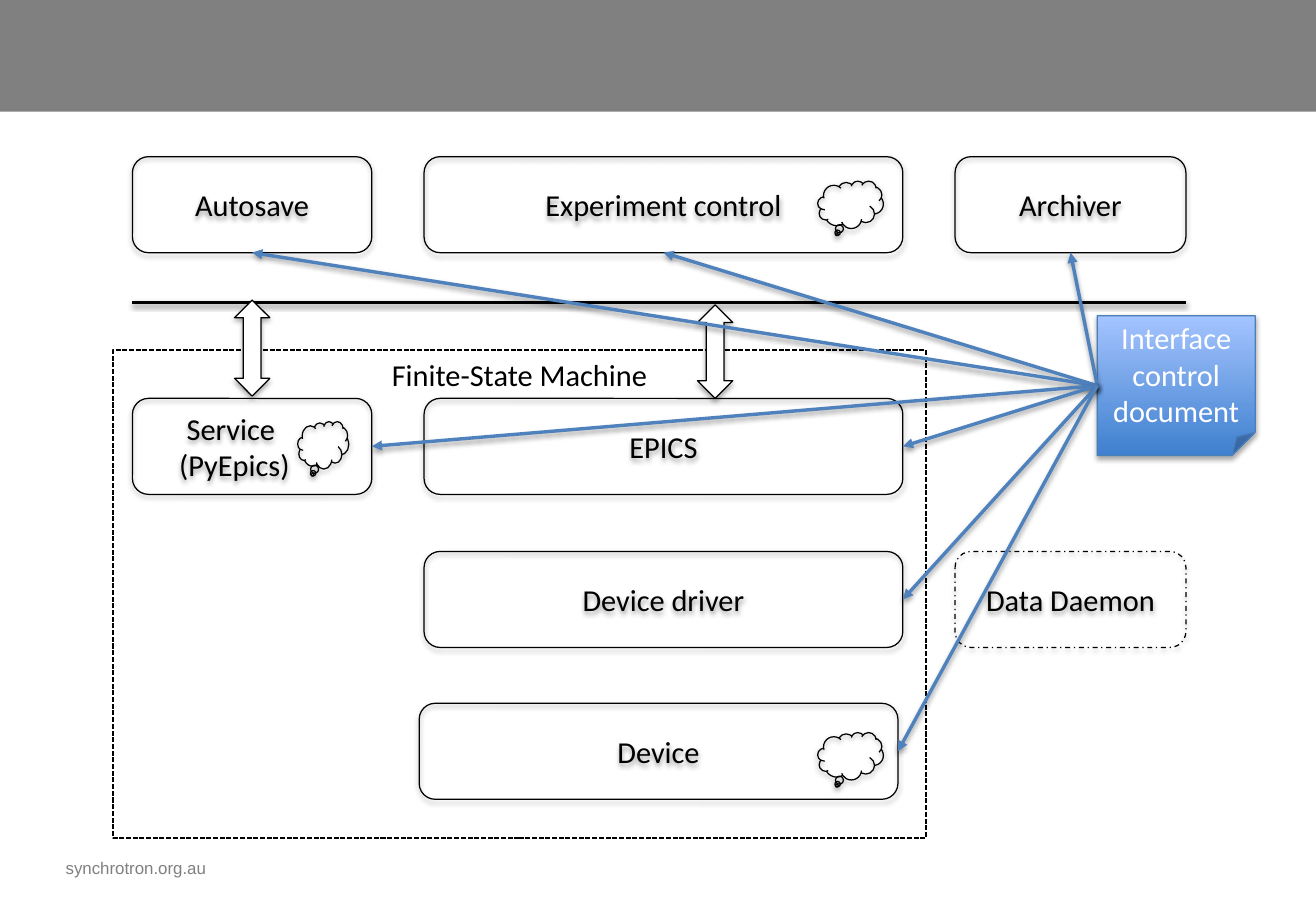
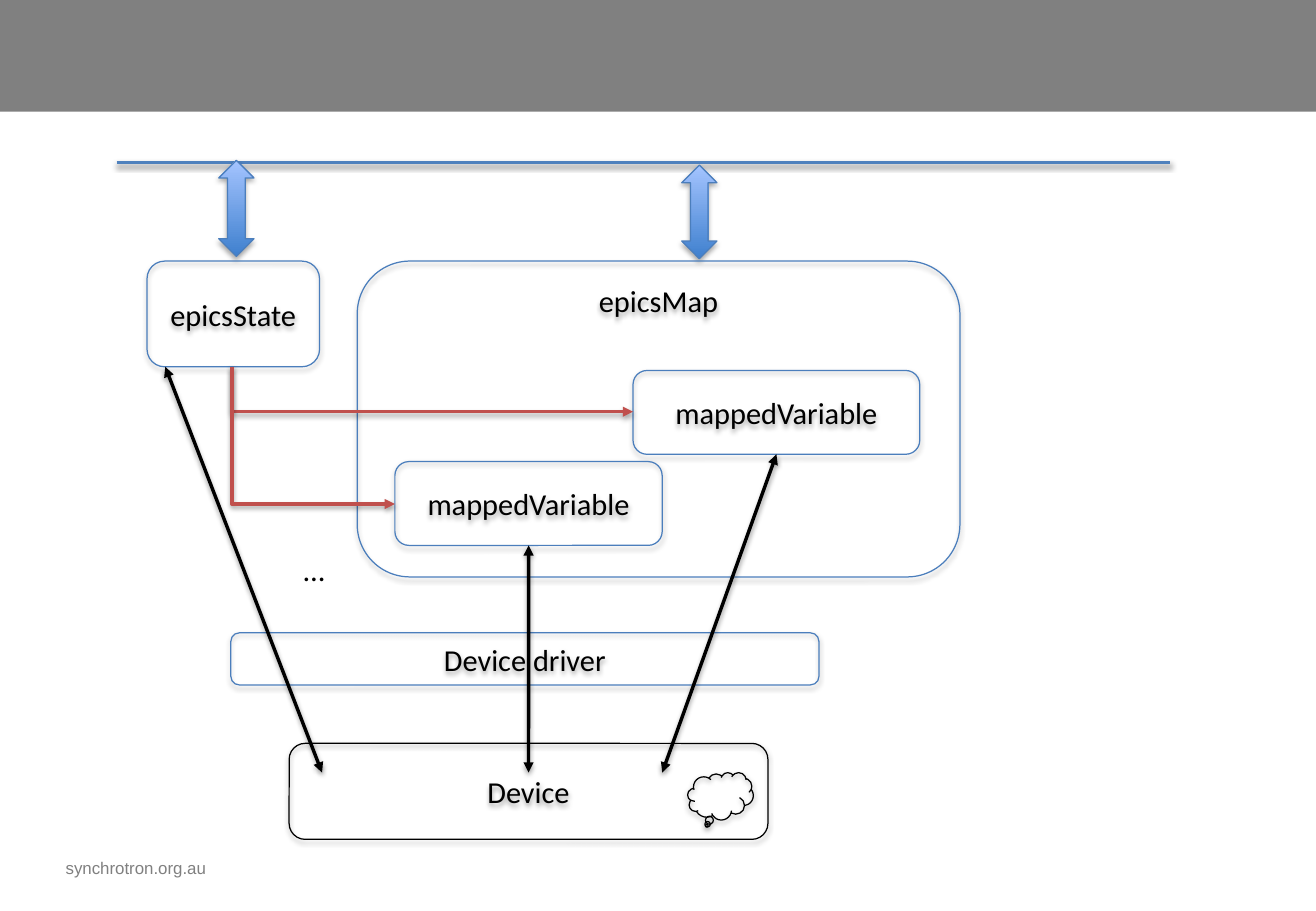
from dataclasses import dataclass

from lxml.etree import SubElement
from pptx import Presentation
from pptx.dml.color import RGBColor
from pptx.enum.dml import MSO_LINE as DASH
from pptx.enum.shapes import MSO_CONNECTOR as LINK, MSO_SHAPE as SHAPE
from pptx.enum.text import MSO_ANCHOR as ANCHOR, MSO_AUTO_SIZE as AUTO, PP_ALIGN as ALIGN
from pptx.oxml.ns import qn
from pptx.util import Inches, Pt


@dataclass(frozen=True)
class Theme:
    black: RGBColor = RGBColor.from_string("000000")
    white: RGBColor = RGBColor.from_string("FFFFFF")
    grey: RGBColor = RGBColor.from_string("808080")
    blue: RGBColor = RGBColor.from_string("4F81BD")
    outline: RGBColor = RGBColor.from_string("4B7EBC")
    red: RGBColor = RGBColor.from_string("C0504D")
    gradient: tuple = (RGBColor.from_string("3F80CE"), RGBColor.from_string("A4C4FF"))
    font: str = "Calibri"
    footer_font: str = "Arial"
    body: Pt = Pt(18)
    small: Pt = Pt(10)
    thin: Pt = Pt(0.75)
    frame: Pt = Pt(1)
    thick: Pt = Pt(2)
    # Shadows: opacity in percent, distance in points
    firm: tuple = (38, 1.6)
    soft: tuple = (35, 1.8)


T = Theme()
raised = []  # (shape, shadow) pairs


def box(s, kind, at, text="", line=T.black, fill=None, color=T.black, width=T.thin,
        dash=None, anchor=ANCHOR.MIDDLE, shadow=T.firm):
    """Add an outlined shape; fill is None, a colour or a pair of gradient colours."""
    sp = s.shapes.add_shape(kind, *map(Inches, at))
    sp.shadow.inherit = False
    if fill is None:
        sp.fill.background()
    elif fill == T.gradient:
        sp.fill.gradient()
        sp.fill.gradient_angle = 90
        for stop, stop_color in zip(sp.fill.gradient_stops, fill):
            stop.color.rgb = stop_color
    else:
        sp.fill.solid()
        sp.fill.fore_color.rgb = fill
    sp.line.color.rgb = line
    sp.line.width = width
    if dash:
        sp.line.dash_style = dash
    if text:
        tf = sp.text_frame
        tf.word_wrap = True
        tf.vertical_anchor = anchor
        p = tf.paragraphs[0]
        p.alignment = ALIGN.CENTER
        for i, part in enumerate(text.split("\n")):
            if i:
                p.add_line_break()
            r = p.add_run()
            r.text = part
            r.font.name, r.font.size, r.font.color.rgb = T.font, T.body, color
    if shadow:
        raised.append((sp, shadow))
    return sp


def link(s, start, end, color, arrows=()):
    """Draw a line; each end is a point in inches or a (shape, side) pair."""
    c = s.shapes.add_connector(LINK.STRAIGHT, 0, 0, 0, 0)
    if isinstance(start[0], float):
        c.begin_x, c.begin_y = map(Inches, start)
    else:
        c.begin_connect(*start)
    if isinstance(end[0], float):
        c.end_x, c.end_y = map(Inches, end)
    else:
        c.end_connect(*end)
    c.line.color.rgb = color
    c.line.width = T.thick
    ln = c.element.spPr.find(qn("a:ln"))
    for arrow in arrows:
        SubElement(ln, qn(f"a:{arrow}"), type="triangle")
    raised.append((c, T.firm))
    return c


prs = Presentation()
prs.slide_width, prs.slide_height = Inches(10.83), Inches(7.5)
layout = prs.slide_layouts[6]
overview, mapping = [prs.slides.add_slide(layout) for _ in range(2)]

# Band and footer, moved to the layout so that both slides share them
for ph in list(layout.placeholders):
    ph.element.getparent().remove(ph.element)
band = overview.shapes.add_shape(SHAPE.RECTANGLE, 0, 0, prs.slide_width, Inches(0.92))
band.shadow.inherit = False
band.fill.solid()
band.fill.fore_color.rgb = T.grey
band.line.fill.background()
footer = overview.shapes.add_textbox(Inches(0.54), Inches(7.01), Inches(2.05), Inches(0.27))
tf = footer.text_frame
tf.word_wrap = True
tf.margin_left = 0
r = tf.paragraphs[0].add_run()
r.text = "synchrotron.org.au"
r.font.name, r.font.size, r.font.color.rgb = T.footer_font, T.small, T.grey
for sp in (band, footer):
    layout.shapes.element.append(sp.element)

# Frame of the state machine, behind everything else
box(overview, SHAPE.RECTANGLE, (0.93, 2.88, 6.69, 4.02), "Finite-State Machine",
    fill=T.white, width=T.frame, dash=DASH.SQUARE_DOT, anchor=ANCHOR.TOP, shadow=None)

# Bus with its two double arrows
for s, x, y, bus_color, line, fill in (
        (overview, 1.09, 2.49, T.black, T.black, T.white),
        (mapping, 0.96, 1.34, T.blue, T.outline, T.gradient)):
    link(s, (x, y), (x + 8.67, y), bus_color)
    for dx, dy, h in ((4.65, 0.02, 0.77), (0.84, -0.02, 0.79)):
        box(s, SHAPE.UP_DOWN_ARROW, (x + dx, y + dy, 0.29, h),
            line=line, fill=fill, shadow=T.soft)

# Slide 1: components and the interface document
BOX_H = 0.79
components = {}
for text, x, y, w in (
        ("Experiment control", 3.49, 1.29, 3.94),
        ("EPICS", 3.49, 3.28, 3.94),
        ("Device driver", 3.49, 4.54, 3.94),
        ("Autosave", 1.09, 1.29, 1.97),
        ("Archiver", 7.86, 1.29, 1.9),
        ("Device", 3.45, 5.79, 3.94),
        ("Service \n(PyEpics)", 1.09, 3.28, 1.97)):
    components[text] = box(overview, SHAPE.ROUNDED_RECTANGLE, (x, y, w, BOX_H), text)
components["Service \n(PyEpics)"].text_frame.margin_right = Inches(0.39)
box(overview, SHAPE.ROUNDED_RECTANGLE, (7.86, 4.54, 1.9, BOX_H), "Data Daemon",
    dash=DASH.DASH_DOT)

document = box(overview, SHAPE.FOLDED_CORNER, (9.03, 2.6, 1.3, 1.15),
               "Interface control document", line=T.outline, fill=T.gradient,
               color=T.white, shadow=T.soft)
for text, side in (("Archiver", 2), ("Experiment control", 2), ("Autosave", 2),
                   ("Service \n(PyEpics)", 3), ("EPICS", 3), ("Device driver", 3),
                   ("Device", 3)):
    link(overview, (document, 1), (components[text], side), T.blue, ["tailEnd"])

# Slide 2: state and mapped variables
epics_map, epics_state, upper_var, lower_var, driver = [
    box(mapping, SHAPE.ROUNDED_RECTANGLE, at, text, line=T.outline, shadow=T.soft)
    for text, at in (
        ("epicsMap", (2.94, 2.15, 4.96, 2.6)),
        ("epicsState", (1.21, 2.15, 1.42, 0.87)),
        ("mappedVariable", (5.21, 3.05, 2.36, 0.69)),
        ("mappedVariable", (3.25, 3.8, 2.2, 0.69)),
        ("Device driver", (1.9, 5.21, 4.84, 0.43)))]
epics_map.text_frame.vertical_anchor = ANCHOR.TOP

# Elbows that go down from the state, then right to a variable
x, y = 1.91, 3.02
for end_x, end_y in ((5.21, 3.39), (3.25, 4.15)):
    dx, dy = end_x - x, end_y - y
    c = link(mapping, (x, y), (end_x, end_y), T.red, ["tailEnd"])
    c.left, c.top = Inches(x + (dx - dy) / 2), Inches(y + (dy - dx) / 2)
    c.width, c.height = Inches(dy), Inches(dx)
    spPr = c.element.spPr
    spPr.find(qn("a:prstGeom")).set("prst", "bentConnector2")
    xfrm = spPr.find(qn("a:xfrm"))
    xfrm.set("rot", str(270 * 60000))
    xfrm.set("flipH", "1")

for start, end in (((1.36, 3.02), (2.65, 6.36)),
                   ((lower_var, 2), (4.35, 6.36)),
                   ((upper_var, 2), (5.45, 6.36))):
    link(mapping, start, end, T.black, ["headEnd", "tailEnd"])

dots = mapping.shapes.add_textbox(Inches(2.4), Inches(4.49), Inches(0.5), Inches(0.4))
tf = dots.text_frame
tf.word_wrap = True
tf.auto_size = AUTO.SHAPE_TO_FIT_TEXT
dots.element.txBody.find(qn("a:bodyPr")).set("vert", "wordArtVert")
r = tf.paragraphs[0].add_run()
r.text = "…"
r.font.name, r.font.size, r.font.color.rgb = T.font, T.body, T.black

box(mapping, SHAPE.ROUNDED_RECTANGLE, (2.38, 6.12, 3.94, BOX_H), "Device")

# Thought clouds
for s, x, y, w in ((overview, 6.73, 6.03, 0.54), (overview, 6.73, 1.49, 0.54),
                   (overview, 2.45, 3.47, 0.42), (mapping, 5.66, 6.36, 0.54)):
    box(s, SHAPE.CLOUD_CALLOUT, (x, y, w, 0.39))

# Shadows
for sp, (opacity, distance) in raised:
    spPr = sp.element.spPr
    effects = spPr.find(qn("a:effectLst"))
    if effects is None:
        effects = SubElement(spPr, qn("a:effectLst"))
    shadow = SubElement(effects, qn("a:outerShdw"), blurRad=str(Pt(3.1)),
                        dist=str(Pt(distance)), dir=str(90 * 60000), rotWithShape="0")
    tint = SubElement(shadow, qn("a:srgbClr"), val=str(T.black))
    SubElement(tint, qn("a:alpha"), val=str(opacity * 1000))

prs.save("out.pptx")
